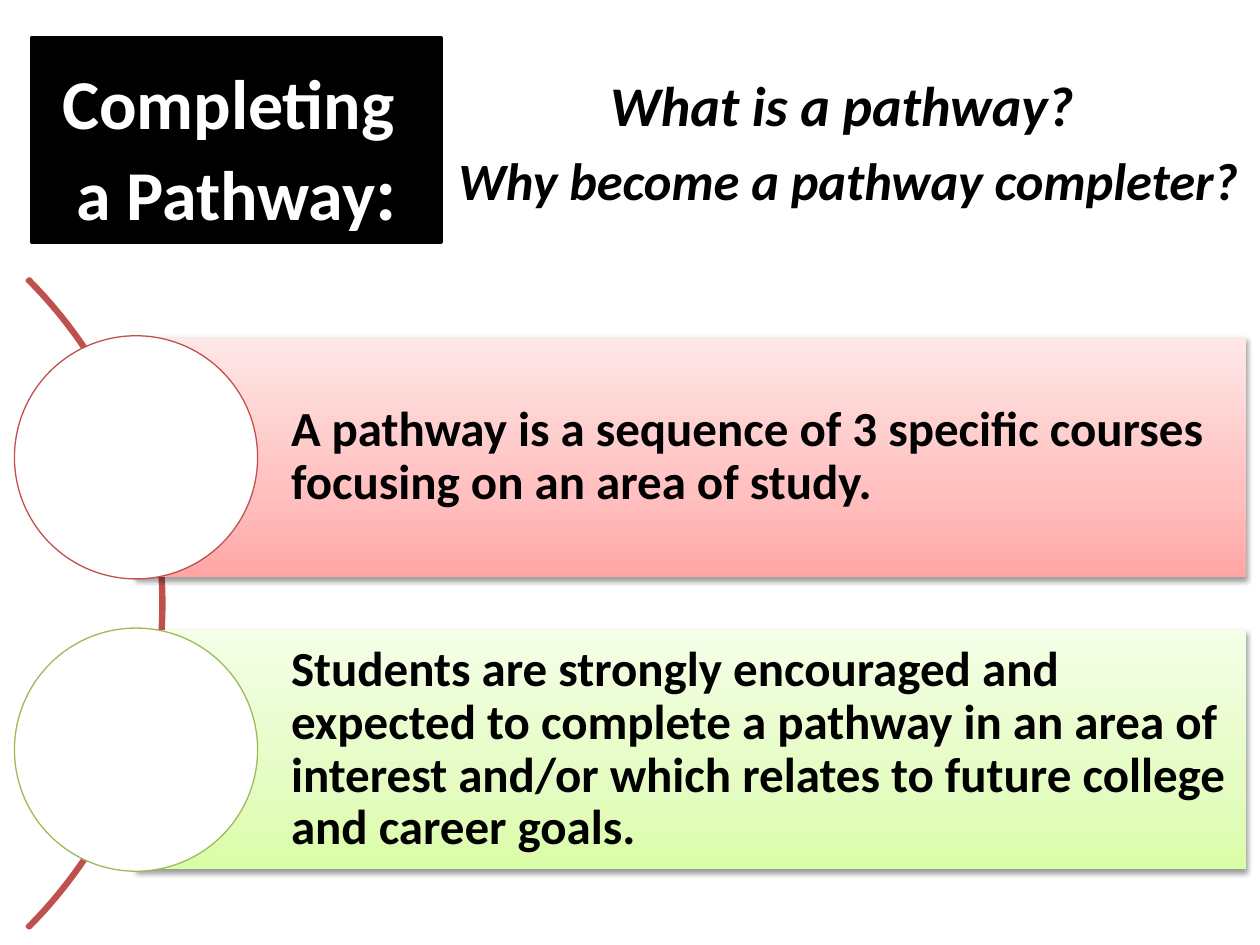
from dataclasses import dataclass

from lxml import etree
from pptx import Presentation
from pptx.dml.color import RGBColor
from pptx.enum.shapes import MSO_SHAPE
from pptx.enum.text import MSO_ANCHOR, PP_ALIGN
from pptx.oxml.ns import qn
from pptx.util import Inches, Pt

RECT, OVAL, ARC = MSO_SHAPE.RECTANGLE, MSO_SHAPE.OVAL, MSO_SHAPE.BLOCK_ARC
MIDDLE, BOTTOM = MSO_ANCHOR.MIDDLE, MSO_ANCHOR.BOTTOM
LEFT, CENTER = PP_ALIGN.LEFT, PP_ALIGN.CENTER


@dataclass(frozen=True)
class Theme:
    font: str = "Calibri"
    black: str = "000000"
    white: str = "FFFFFF"
    red: str = "C0504D"
    green: str = "9BBB59"
    pink_fade: tuple = ((0, "FFA6A5"), (35, "FFC0BF"), (100, "FFE7E7"))
    lime_fade: tuple = ((0, "DAFDA7"), (35, "E4FCC2"), (100, "F5FFE7"))
    title: int = 40
    colon: int = 44
    ask: int = 32
    why: int = 30
    body: int = 28


THEME = Theme()

POINTS = [
    ("A pathway is a sequence of 3 specific courses focusing on an area of study.",
     THEME.pink_fade, THEME.red),
    ("Students are strongly encouraged and expected to complete a pathway in an "
     "area of interest and/or which relates to future college and career goals.",
     THEME.lime_fade, THEME.green),
]


def add_form(slide, kind, box, fill=None, line=None, width=1):
    form = slide.shapes.add_shape(kind, *map(Inches, box))
    form.shadow.inherit = False
    if fill:
        form.fill.solid()
        form.fill.fore_color.rgb = RGBColor.from_string(fill)
    if line:
        form.line.color.rgb = RGBColor.from_string(line)
        form.line.width = Pt(width)
    else:
        form.line.fill.background()
    return form


def set_frame(shape, anchor, insets=(0.1, 0.05, 0.1, 0.05)):
    frame = shape.text_frame
    frame.word_wrap = True
    frame.vertical_anchor = anchor
    for side, inset in zip(("left", "top", "right", "bottom"), insets):
        setattr(frame, f"margin_{side}", Inches(inset))
    return frame


def add_run(para, text, size, color, **style):
    run = para.add_run()
    run.text = text
    look = {"name": THEME.font, "size": Pt(size), "bold": True, **style}
    for key, value in look.items():
        setattr(run.font, key, value)
    run.font.color.rgb = RGBColor.from_string(color)


def add_color(parent, color):
    return etree.SubElement(parent, qn("a:srgbClr"), val=color)


def add_fade(shape, stops):
    """Fill from the bottom edge up through the given stops."""
    shape.fill.gradient()
    shape.fill.gradient_angle = 90
    ramp = shape.element.spPr.find(".//" + qn("a:gsLst"))
    for stop in list(ramp):
        ramp.remove(stop)
    for pos, color in stops:
        add_color(etree.SubElement(ramp, qn("a:gs"), pos=str(pos * 1000)), color)


def add_shade(shape):
    effects = shape.element.spPr.find(qn("a:effectLst"))
    shade = etree.SubElement(effects, qn("a:outerShdw"), blurRad=str(Pt(3.1)),
                             dist=str(Pt(1.6)), dir="5400000", rotWithShape="0")
    etree.SubElement(add_color(shade, THEME.black), qn("a:alpha"), val="38000")


def add_title(slide, box):
    panel = add_form(slide, RECT, box, THEME.black, THEME.black, 2)
    para = set_frame(panel, BOTTOM).paragraphs[0]
    para.alignment = CENTER
    add_run(para, "Completing ", THEME.title, THEME.white)
    para.add_line_break()
    add_run(para, "a Pathway", THEME.title, THEME.white)
    add_run(para, ":", THEME.colon, THEME.white)


def add_asks(slide, box):
    frame = set_frame(slide.shapes.add_textbox(*map(Inches, box)), MIDDLE)
    asks = [("What is a pathway? ", THEME.ask),
            ("Why become a pathway completer?", THEME.why)]
    for i, (text, size) in enumerate(asks):
        para = frame.add_paragraph() if i else frame.paragraphs[0]
        para.alignment = CENTER
        para.space_before = Pt(6)
        add_run(para, text, size, THEME.black, italic=True)


def add_point(slide, box, text, fade, edge):
    left, top, width, height = box
    bar = add_form(slide, RECT, box)
    add_fade(bar, fade)
    add_shade(bar)
    para = set_frame(bar, MIDDLE, (1.23, 0.08, 0.08, 0.08)).paragraphs[0]
    para.alignment = LEFT
    para.line_spacing = 0.9
    add_run(para, text, THEME.body, THEME.black)

    # Circle centred on the bar's left edge
    size = height + 0.03
    disc = (left - size / 2, top + (height - size) / 2, size, size)
    add_form(slide, OVAL, disc, THEME.white, edge, 0.75)


def add_list(slide, box):
    left, top, width, height = box
    # Curve behind the circles
    size = 7.29
    curve = (left + 0.22 - size, top + (height - size) / 2, size, size)
    arc = add_form(slide, ARC, curve, line=THEME.red, width=2)
    arc.fill.background()
    for i, value in enumerate((189, 27, 0.003)):
        arc.adjustments[i] = value

    # Bars spread evenly over the height
    tall = 1.9
    step = (height - tall) / (len(POINTS) - 1)
    for i, point in enumerate(POINTS):
        add_point(slide, (left, top + i * step, width, tall), *point)


def main():
    deck = Presentation()
    deck.slide_width, deck.slide_height = Inches(10), Inches(7.5)
    slide = deck.slides.add_slide(deck.slide_layouts[6])
    add_title(slide, (0.25, 0.3, 3.25, 1.62))
    add_list(slide, (1.08, 2.68, 8.81, 4.22))
    add_asks(slide, (3.5, 0.33, 6.47, 1.58))
    deck.save("out.pptx")


if __name__ == "__main__":
    main()
